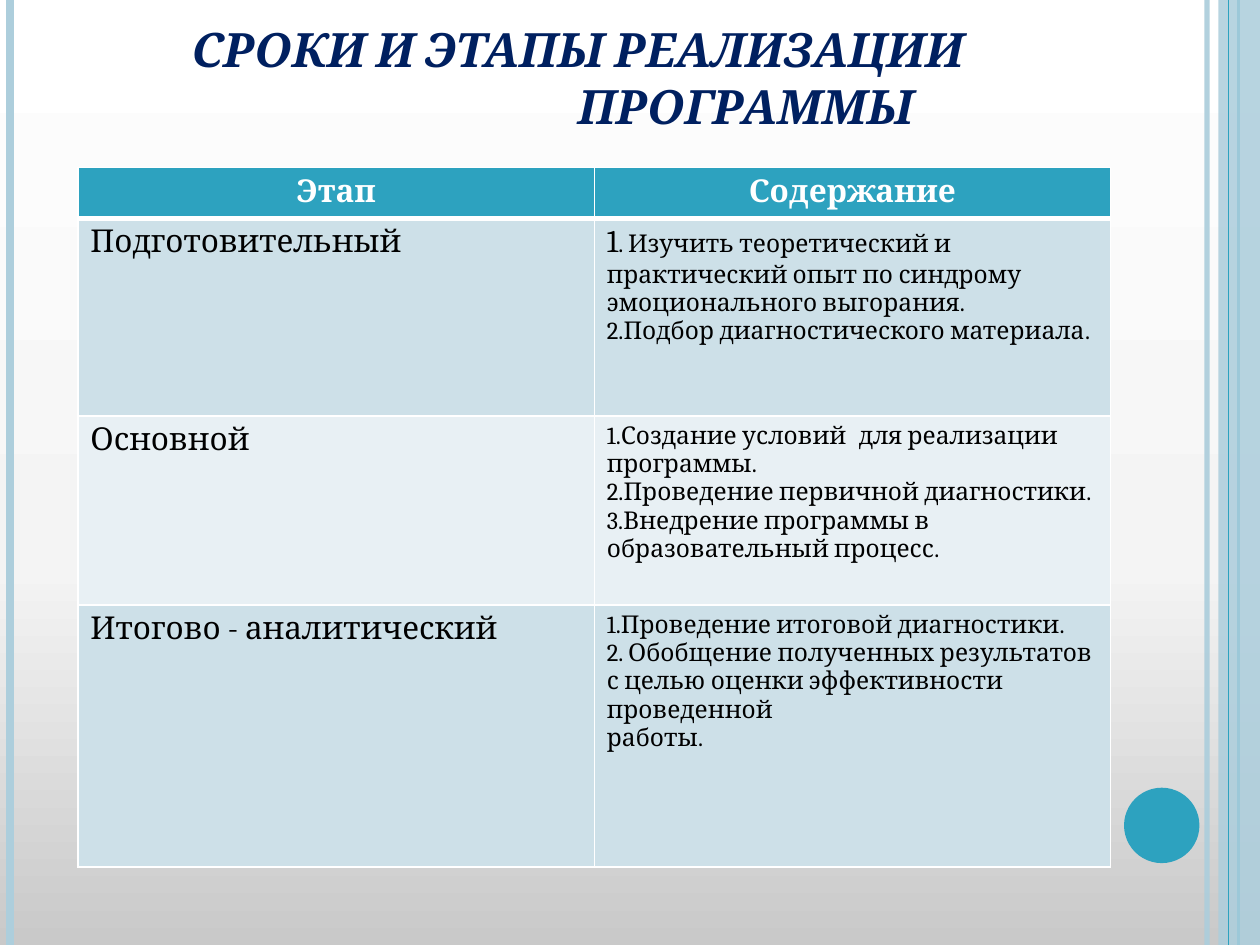
import dataclasses
import typing

import lxml.etree
import pptx
import pptx.dml.color
import pptx.enum.shapes
import pptx.enum.text
import pptx.oxml
import pptx.oxml.ns
import pptx.util

Cm = pptx.util.Cm
Pt = pptx.util.Pt
Align = pptx.enum.text.PP_ALIGN
ShapeType = pptx.enum.shapes.MSO_SHAPE
qn = pptx.oxml.ns.qn

FONT = "Cambria"
ACCENT, PALE, WHITE, BLACK, NAVY = "2DA2BF", "ADCEDC", "FFFFFF", "000000", "002060"
SLIDE_WIDTH, SLIDE_HEIGHT = 25.4, 19.05
BACKGROUND_STOPS = [(0, "C9C9C9"), (40, "F4F4F4"), (100, WHITE)]
COLUMN_WIDTH = 10.41
HEADER_HEIGHT = 1.02
BAND_FILLS = ["CDE0E8", "E8F0F4"]


@dataclasses.dataclass
class Stripe:
    x: float
    color: str
    width: float
    opacity: int = 100


@dataclasses.dataclass
class Stage:
    name: str
    steps: list[str]
    height: float
    lead: str = ""


STRIPES_BELOW = [
    Stripe(24.33, PALE, 3, 93),
    Stripe(0.2, PALE, 4.5),
    Stripe(24.97, ACCENT, 1.5),
]
STRIPE_ABOVE = Stripe(24.77, ACCENT, 0.75)

STAGES = [
    Stage("Подготовительный", [
        ". Изучить теоретический и практический опыт по синдрому эмоционального выгорания.",
        "2.Подбор диагностического материала.",
    ], 3.99, lead="1"),
    Stage("Основной", [
        "1.Создание условий\tдля реализации программы.",
        "2.Проведение первичной диагностики.",
        "3.Внедрение программы в",
        "образовательный процесс.",
    ], 3.81),
    Stage("Итогово - аналитический", [
        "1.Проведение итоговой диагностики.",
        "2. Обобщение полученных результатов с целью оценки эффективности проведенной",
        "работы.",
    ], 5.28),
]


def rgb(color: str) -> pptx.dml.color.RGBColor:
    return pptx.dml.color.RGBColor.from_string(color)


def add_element(parent: typing.Any, tag: str, **attributes: typing.Any) -> typing.Any:
    values = {name: str(value) for name, value in attributes.items()}
    return lxml.etree.SubElement(parent, qn(tag), values)


def set_opacity(properties: typing.Any, percent: int) -> None:
    if percent < 100:
        color = next(properties.iter(qn("a:srgbClr")))
        add_element(color, "a:alpha", val=percent * 1000)


def paint_background(slide: typing.Any) -> None:
    slide.background.fill.gradient()
    gradient = next(slide.element.iter(qn("a:gradFill")))
    for child in list(gradient):
        gradient.remove(child)
    stops = add_element(gradient, "a:gsLst")
    for position, color in BACKGROUND_STOPS:
        stop = add_element(stops, "a:gs", pos=position * 1000)
        add_element(stop, "a:srgbClr", val=color)
    add_element(gradient, "a:lin", ang=270 * 60000, scaled=0)


def add_stripe(slide: typing.Any, stripe: Stripe) -> None:
    line = slide.shapes.add_connector(
        pptx.enum.shapes.MSO_CONNECTOR.STRAIGHT,
        Cm(stripe.x), Cm(0), Cm(stripe.x), Cm(SLIDE_HEIGHT))
    line.line.color.rgb = rgb(stripe.color)
    line.line.width = Pt(stripe.width)
    properties = line.element.spPr
    set_opacity(properties, stripe.opacity)
    add_element(properties, "a:effectLst")


def add_panel(slide: typing.Any, kind: typing.Any, left: float, top: float,
              width: float, height: float, color: str, opacity: int = 100) -> None:
    shape = slide.shapes.add_shape(kind, Cm(left), Cm(top), Cm(width), Cm(height))
    shape.shadow.inherit = False
    shape.fill.solid()
    shape.fill.fore_color.rgb = rgb(color)
    shape.line.fill.background()
    set_opacity(shape.element.spPr, opacity)


def write(paragraph: typing.Any, text: str, *, size: float, color: str = BLACK,
          bold: bool = False, italic: bool = False, align: typing.Any = Align.LEFT) -> None:
    paragraph.alignment = align
    run = paragraph.add_run()
    run.text = text
    run.font.name = FONT
    run.font.size = Pt(size)
    run.font.color.rgb = rgb(color)
    run.font.bold = bold
    run.font.italic = italic


def next_paragraph(frame: typing.Any, index: int) -> typing.Any:
    return frame.add_paragraph() if index else frame.paragraphs[0]


def add_title(slide: typing.Any) -> None:
    box = slide.shapes.add_textbox(Cm(1.27), Cm(0.32), Cm(20.75), Cm(2.5))
    frame = box.text_frame
    frame.word_wrap = True
    frame.vertical_anchor = pptx.enum.text.MSO_ANCHOR.BOTTOM
    lines = [("СРОКИ И ЭТАПЫ РЕАЛИЗАЦИИ", 0), ("ПРОГРАММЫ", 6.77)]
    for index, (text, indent) in enumerate(lines):
        paragraph = next_paragraph(frame, index)
        write(paragraph, text, size=27, color=NAVY, bold=True, italic=True, align=Align.CENTER)
        paragraph._p.get_or_add_pPr().set("marL", str(Cm(indent)))


def style_cell(cell: typing.Any, fill: str, top: float = 1, bottom: float = 1) -> None:
    properties = cell._tc.get_or_add_tcPr()
    for side, width in {"L": 1, "R": 1, "T": top, "B": bottom}.items():
        border = add_element(properties, f"a:ln{side}", w=Pt(width))
        solid = add_element(border, "a:solidFill")
        add_element(solid, "a:srgbClr", val=WHITE)
    cell.fill.solid()
    cell.fill.fore_color.rgb = rgb(fill)


def add_stage_table(slide: typing.Any) -> None:
    heights = [HEADER_HEIGHT] + [stage.height for stage in STAGES]
    table = slide.shapes.add_table(
        len(heights), 2, Cm(1.57), Cm(3.38), Cm(2 * COLUMN_WIDTH), Cm(sum(heights))).table
    table.first_row = table.horz_banding = False
    for column in table.columns:
        column.width = Cm(COLUMN_WIDTH)
    for row, height in zip(table.rows, heights):
        row.height = Cm(height)
    for cell, heading in zip(table.rows[0].cells, ["Этап", "Содержание"]):
        style_cell(cell, ACCENT, bottom=3)
        write(cell.text_frame.paragraphs[0], heading, size=18, color=WHITE,
              bold=True, align=Align.CENTER)
    for index, stage in enumerate(STAGES):
        name_cell, steps_cell = table.rows[index + 1].cells
        for cell in (name_cell, steps_cell):
            style_cell(cell, BAND_FILLS[index % 2], top=1 if index else 3)
        write(name_cell.text_frame.paragraphs[0], stage.name, size=18)
        for position, step in enumerate(stage.steps):
            paragraph = next_paragraph(steps_cell.text_frame, position)
            if stage.lead and position == 0:
                write(paragraph, stage.lead, size=18)
            write(paragraph, step, size=14)


def main() -> None:
    """Build the slide with the stages of the programme and save it."""
    presentation = pptx.Presentation()
    presentation.slide_width = Cm(SLIDE_WIDTH)
    presentation.slide_height = Cm(SLIDE_HEIGHT)
    slide = presentation.slides.add_slide(presentation.slide_layouts[6])
    paint_background(slide)
    for stripe in STRIPES_BELOW:
        add_stripe(slide, stripe)
    add_panel(slide, ShapeType.RECTANGLE, 24.56, 0, 0.84, SLIDE_HEIGHT, PALE, opacity=87)
    add_stripe(slide, STRIPE_ABOVE)
    add_panel(slide, ShapeType.OVAL, 22.66, 15.88, 1.52, 1.52, ACCENT)
    add_title(slide)
    add_stage_table(slide)
    presentation.save("out.pptx")


if __name__ == "__main__":
    main()
